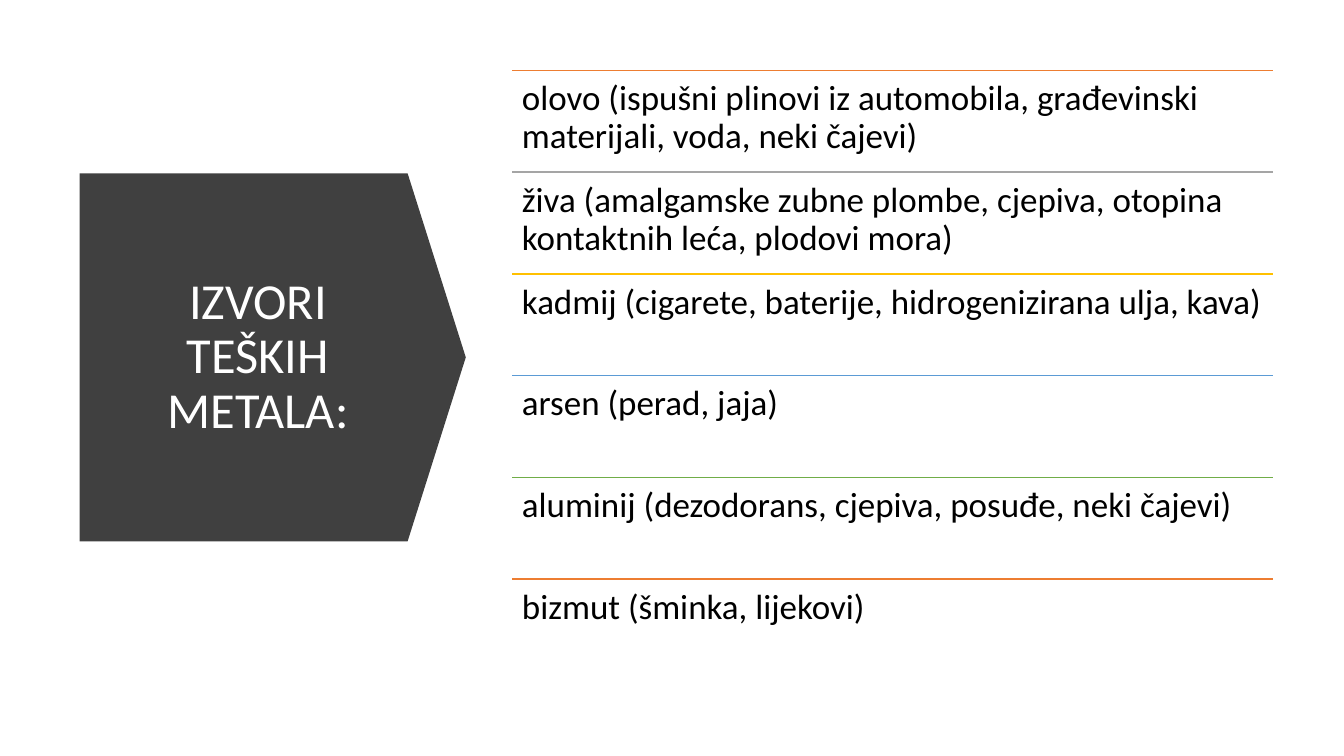
from lxml import etree
from pptx import Presentation
from pptx import util as u
from pptx.dml.color import RGBColor
from pptx.enum import shapes, text
from pptx.oxml.ns import qn

COLORS = {"arrow": "404040", "title": "FFFFFF", "body": "000000",
          "orange": "ED7D31", "gray": "A5A5A5", "gold": "FFC000",
          "blue": "5B9BD5", "green": "70AD47"}

SOURCES = [
    ("olovo (ispušni plinovi iz automobila, građevinski materijali, voda, neki čajevi)", "orange"),
    ("živa (amalgamske zubne plombe, cjepiva, otopina kontaktnih leća, plodovi mora)", "gray"),
    ("kadmij (cigarete, baterije, hidrogenizirana ulja, kava)", "gold"),
    ("arsen (perad, jaja)", "blue"),
    ("aluminij (dezodorans, cjepiva, posuđe, neki čajevi)", "green"),
    ("bizmut (šminka, lijekovi)", "orange"),
]

deck = Presentation()
deck.slide_width, deck.slide_height = u.Inches(13.33), u.Inches(7.5)
page = deck.slides.add_slide(deck.slide_layouts[6])

# Grid of 100 columns by 100 rows
COL, ROW = deck.slide_width / 100, deck.slide_height / 100


def area(left, top, width, height):
    return [round(n) for n in (left * COL, top * ROW, width * COL, height * ROW)]


def add_text(words, place, size, color, align=text.PP_ALIGN.LEFT,
             anchor=text.MSO_ANCHOR.TOP, inset=0.1):
    box = page.shapes.add_textbox(*place)
    frame = box.text_frame
    frame.word_wrap = True
    frame.vertical_anchor = anchor
    frame.margin_left = frame.margin_right = u.Inches(0.1)
    frame.margin_top = frame.margin_bottom = u.Inches(inset)
    para = frame.paragraphs[0]
    para.alignment, para.line_spacing = align, 0.9
    span = para.add_run()
    span.text = words
    span.font.name, span.font.size = "Calibri", u.Pt(size)
    span.font.color.rgb = RGBColor.from_string(COLORS[color])


# Arrow block pointing at the list
arrow = page.shapes.add_shape(shapes.MSO_SHAPE.DOWN_ARROW, *area(6.6, 21.73, 27.38, 51.07))
arrow.rotation = 270
arrow.adjustments[0], arrow.adjustments[1] = 1, 0.158
arrow.shadow.inherit = False
arrow.fill.solid()
arrow.fill.fore_color.rgb = RGBColor.from_string(COLORS["arrow"])
arrow.line.fill.background()

# Title
add_text("IZVORI TEŠKIH METALA:", area(8.4, 28.67, 21.6, 37.2), 36, "title",
         align=text.PP_ALIGN.CENTER, anchor=text.MSO_ANCHOR.MIDDLE, inset=0.05)

# List of sources, each under its own coloured rule
LIST_LEFT, LIST_TOP, LIST_WIDTH, STEP = 38.1, 9.33, 56.63, 13.45
for index, (words, color) in enumerate(SOURCES):
    place = area(LIST_LEFT, LIST_TOP + index * STEP, LIST_WIDTH, STEP)
    left, top, width, height = place
    rule = page.shapes.add_connector(shapes.MSO_CONNECTOR.STRAIGHT, left, top, left + width, top)
    rule.line.width = u.Pt(1)
    rule.line.color.rgb = RGBColor.from_string(COLORS[color])
    etree.SubElement(rule._element.spPr, qn("a:effectLst"))
    add_text(words, place, 25, "body")

deck.save("out.pptx")
